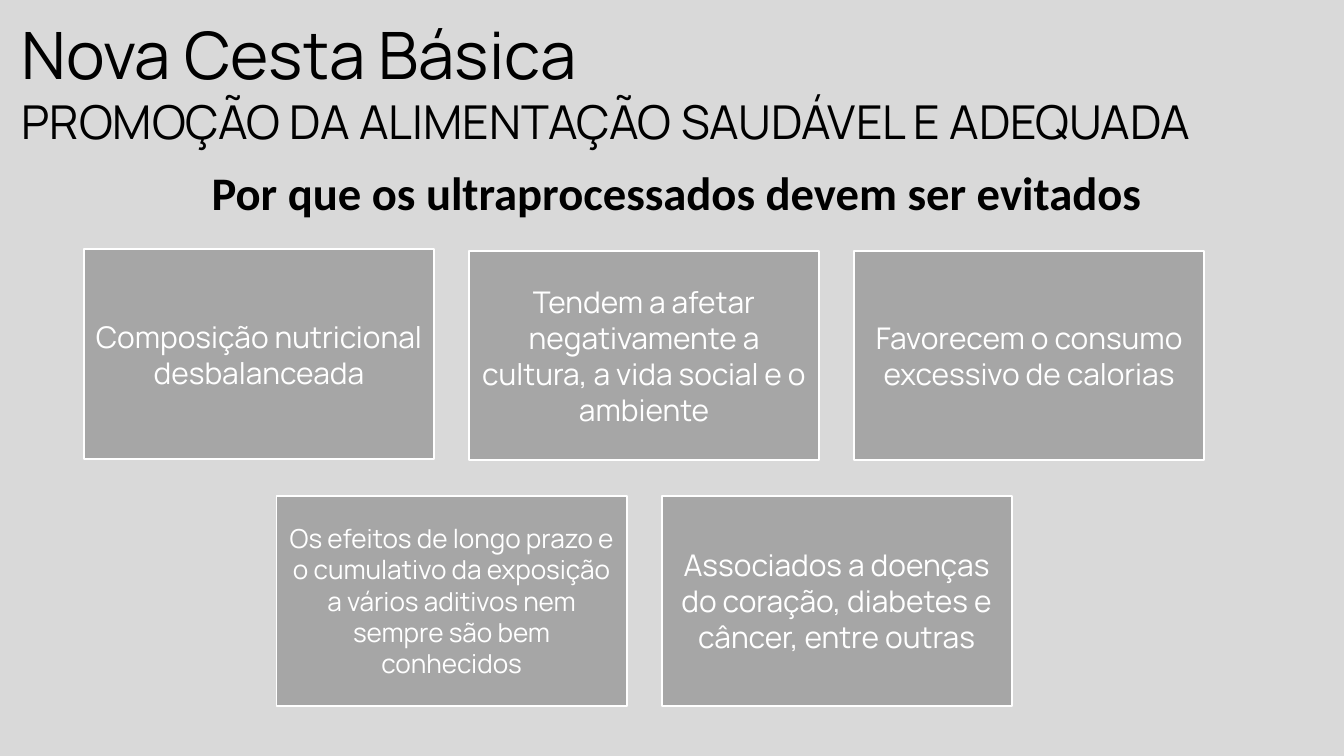
from pptx import Presentation
from pptx.dml.color import RGBColor
from pptx.enum.shapes import MSO_SHAPE
from pptx.enum.text import MSO_ANCHOR, MSO_AUTO_SIZE, PP_ALIGN
from pptx.util import Inches, Pt

RECTANGLE = MSO_SHAPE.RECTANGLE
MIDDLE = MSO_ANCHOR.MIDDLE
CENTER, LEFT = PP_ALIGN.CENTER, PP_ALIGN.LEFT
GROW = MSO_AUTO_SIZE.SHAPE_TO_FIT_TEXT

BACKGROUND, CARD_FILL, BLACK, WHITE = "D9D9D9", "A6A6A6", "000000", "FFFFFF"
BRAND_FONT, QUESTION_FONT = "Manrope", "Calibri"

CARD_WIDTH, CARD_HEIGHT = 5.21, 3.12
COLUMN_STEP, ROW_STEP = 5.73, 3.65
GRID_LEFT, GRID_TOP = 1.25, 3.73

# (column, row, lift, inset, size, reason)
REASONS = [
    (0, 0, 0.02, 0.13, 32, "Composição nutricional desbalanceada"),
    (1, 0, 0, 0.18, 32, "Tendem a afetar negativamente a cultura, a vida social e o ambiente"),
    (2, 0, 0, 0.18, 32, "Favorecem o consumo excessivo de calorias"),
    (0.5, 1, 0, 0.18, 28, "Os efeitos de longo prazo e o cumulativo da exposição "
                          "a vários aditivos nem sempre são bem conhecidos"),
    (1.5, 1, 0, 0.18, 32, "Associados a doenças do coração, diabetes e câncer, entre outras"),
]


def paint(color_format, hex_color):
    """Set a colour from a hex string."""
    color_format.rgb = RGBColor.from_string(hex_color)


def set_insets(frame, horizontal, vertical):
    """Set the inner margins of a text frame in inches."""
    frame.margin_left = frame.margin_right = Inches(horizontal)
    frame.margin_top = frame.margin_bottom = Inches(vertical)


def write_lines(frame, lines, font_name, color, align, bold=False):
    """Write (text, size) lines as paragraphs of one frame."""
    frame.word_wrap = True
    for index, (text, size) in enumerate(lines):
        paragraph = frame.add_paragraph() if index else frame.paragraphs[0]
        paragraph.text = text
        paragraph.alignment = align
        paragraph.font.name = font_name
        paragraph.font.size = Pt(size)
        paragraph.font.bold = bold
        paint(paragraph.font.color, color)


def add_text(slide, left, top, width, height):
    """Add a text box in inches and return its frame."""
    box = slide.shapes.add_textbox(Inches(left), Inches(top), Inches(width), Inches(height))
    return box.text_frame


def add_reason(slide, column, row, lift, inset, size, reason):
    """Add a card holding one reason at a grid position."""
    card = slide.shapes.add_shape(
        RECTANGLE,
        Inches(GRID_LEFT + column * COLUMN_STEP),
        Inches(GRID_TOP + row * ROW_STEP - lift),
        Inches(CARD_WIDTH),
        Inches(CARD_HEIGHT),
    )
    card.shadow.inherit = False
    card.fill.solid()
    paint(card.fill.fore_color, CARD_FILL)
    paint(card.line.color, WHITE)
    card.line.width = Pt(2)
    frame = card.text_frame
    frame.vertical_anchor = MIDDLE
    set_insets(frame, inset, inset)
    write_lines(frame, [(reason, size)], BRAND_FONT, WHITE, CENTER)


def main():
    """Build and save the slide."""
    presentation = Presentation()
    presentation.slide_width, presentation.slide_height = Inches(20), Inches(11.25)
    slide = presentation.slides.add_slide(presentation.slide_layouts[6])
    slide.background.fill.solid()
    paint(slide.background.fill.fore_color, BACKGROUND)

    heading = add_text(slide, 0.32, 0.21, 19.52, 2.02)
    set_insets(heading, 0, 0)
    heading.auto_size = GROW
    heading_lines = [("Nova Cesta Básica", 70),
                     ("PROMOÇÃO DA ALIMENTAÇÃO SAUDÁVEL E ADEQUADA", 50)]
    write_lines(heading, heading_lines, BRAND_FONT, BLACK, LEFT)

    question = add_text(slide, 1.45, 2.39, 17.25, 0.99)
    question_lines = [("Por que os ultraprocessados devem ser evitados", 50)]
    write_lines(question, question_lines, QUESTION_FONT, BLACK, CENTER, bold=True)

    for reason in REASONS:
        add_reason(slide, *reason)

    presentation.save("out.pptx")


if __name__ == "__main__":
    main()
